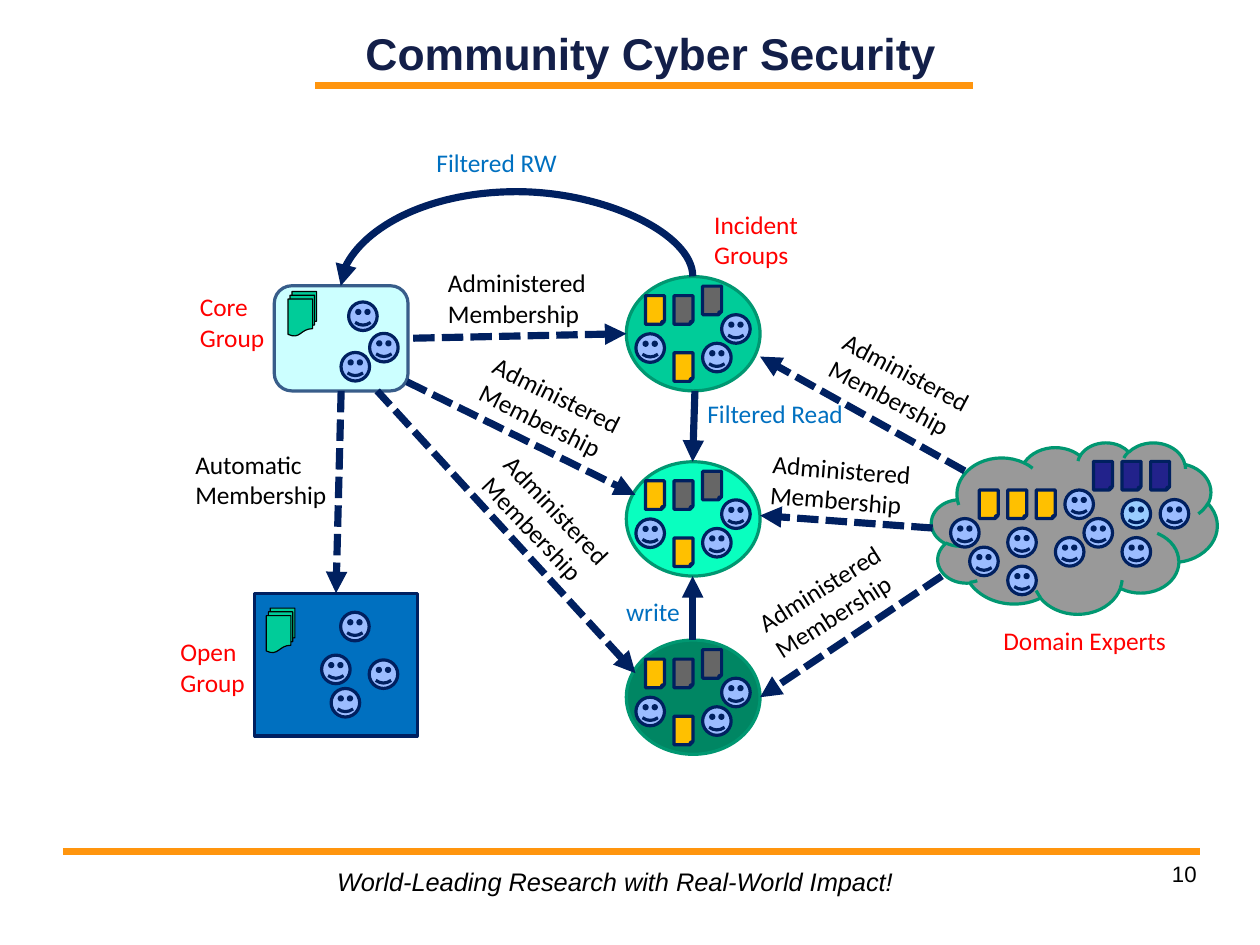
from lxml import etree
from pptx import Presentation
from pptx import util as u
from pptx.dml.color import RGBColor
from pptx.enum import dml, shapes, text
from pptx.oxml.ns import qn

COLORS = {
    "navy": "002060", "title": "131F49", "orange": "FF950E", "black": "000000",
    "red": "FF0000", "blue": "0070C0", "pale": "CCFFFF", "steel": "385D8A",
    "green": "00CC99", "mint": "09FFBF", "deep": "008663", "rim": "009771",
    "gray": "999999", "face": "9BBCFF", "sky": "99CCFF", "gold": "FFC000",
    "slate": "666666", "indigo": "22228B",
}
SHAPE = shapes.MSO_SHAPE
CELL = 1 / 12
FACE = 3 * CELL
NOTE = 2 * CELL


def color(name):
    """Return the named colour."""
    return RGBColor.from_string(COLORS[name])


def add_figure(page, kind, box, fill, outline="navy", weight=2):
    """Draw a filled preset shape in a box given in inches."""
    figure = page.shapes.add_shape(kind, *map(u.Inches, box))
    figure.shadow.inherit = False
    figure.fill.solid()
    figure.fill.fore_color.rgb = color(fill)
    figure.line.color.rgb = color(outline)
    figure.line.width = u.Pt(weight)
    return figure


def add_label(page, words, box, ink="black", turn=0, face="Calibri", size=16):
    """Write a single paragraph in a box, turned clockwise in degrees."""
    label = page.shapes.add_textbox(*map(u.Inches, box))
    label.rotation = turn
    label.text_frame.word_wrap = True
    para = label.text_frame.paragraphs[0]
    para.text = words
    para.font.name, para.font.size = face, u.Pt(size)
    para.font.color.rgb = color(ink)
    return label


def add_line(page, start, end, ink="navy", weight=4.5, dashed=False, tip=None,
             kind=shapes.MSO_CONNECTOR.STRAIGHT):
    """Draw a line; tip is headEnd or tailEnd for an arrowhead there."""
    line = page.shapes.add_connector(kind, *map(u.Inches, (*start, *end)))
    line.line.color.rgb = color(ink)
    line.line.width = u.Pt(weight)
    if dashed:
        line.line.dash_style = dml.MSO_LINE.SQUARE_DOT
    props = line.element.spPr
    if tip:
        etree.SubElement(props.find(qn("a:ln")), qn(f"a:{tip}"), type="triangle")
    etree.SubElement(props, qn("a:effectLst"))
    return line


def add_members(page, box, faces, notes=()):
    """Place faces and notes on a grid that starts at the box corner."""
    left, top = box[:2]
    for column, row, fill in notes:
        place = (left + column * CELL, top + row * CELL, NOTE, FACE)
        add_figure(page, SHAPE.FOLDED_CORNER, place, fill)
    for column, row, fill in faces:
        place = (left + column * CELL, top + row * CELL, FACE, FACE)
        smiley = add_figure(page, SHAPE.SMILEY_FACE, place, fill)
        smiley.adjustments[0] = 0.047


def add_file_group(page, box, kind, fill, outline, files, faces):
    """Draw a group that holds a stack of files and some members."""
    group = add_figure(page, kind, box, fill, outline)
    place = (box[0] + files[0], box[1] + files[1], 0.25, 0.39)
    add_figure(page, SHAPE.FLOWCHART_MULTIDOCUMENT, place, "green", "black", 0.75)
    add_members(page, box, [(*spot, "face") for spot in faces])
    return group


def add_incident(page, box, fill):
    """Draw an incident group with its members and notes."""
    add_figure(page, SHAPE.OVAL, box, fill, "rim")
    faces = [(1, 6, "face"), (10, 4, "face"), (8, 7, "face")]
    notes = [(2, 2, "gold"), (5, 2, "slate"), (8, 1, "slate"), (5, 8, "gold")]
    add_members(page, box, faces, notes)


def add_experts(page, box):
    """Draw the cloud of domain experts."""
    add_figure(page, SHAPE.CLOUD, box, "gray", "rim")
    spots = [(4, 11), (8, 13), (13, 10), (8, 9), (2, 8), (16, 8), (20, 10), (24, 6), (14, 5)]
    faces = [(*spot, "face") for spot in spots] + [(20, 6, "sky")]
    notes = [(start + 3 * step, row, fill)
             for start, row, fill in [(5, 5, "gold"), (17, 2, "indigo")]
             for step in range(3)]
    add_members(page, box, faces, notes)


def add_arc(page, box):
    """Draw the curved arrow from the incident group back to the core group."""
    left, top, width, height = box
    arc = add_line(page, (left + width, top + height), (left, top), tip="tailEnd",
                   kind=shapes.MSO_CONNECTOR.CURVE)
    props = arc.element.spPr
    props.find(qn("a:xfrm")).set("rot", "16200000")
    guides = props.find(qn("a:prstGeom")).get_or_add_avLst()
    etree.SubElement(guides, qn("a:gd"), name="adj1", fmla="val -888200")


def add_arrows(page, core, open_group):
    """Draw the arrows between the groups."""
    add_line(page, (5.48, 2.92), (3.57, 2.96), dashed=True, tip="headEnd").end_connect(core, 3)
    automatic = add_line(page, (2.98, 3.42), (2.94, 5.19), dashed=True, tip="tailEnd")
    automatic.begin_connect(core, 2)
    automatic.end_connect(open_group, 0)
    add_line(page, (5.56, 5.89), (3.3, 3.42), dashed=True, tip="headEnd")
    for start, end, dashed in [
        ((3.56, 3.34), (5.56, 4.33), True),
        ((8.44, 4.12), (6.65, 3.12), True),
        ((8.16, 4.62), (6.65, 4.51), True),
        ((8.24, 5.04), (6.65, 6.1), True),
        ((6.08, 3.42), (6.06, 4.04), False),
        ((6.06, 5.6), (6.06, 5.04), False),
    ]:
        add_line(page, start, end, dashed=dashed, tip="tailEnd")
    add_arc(page, (4.48, 0.92, CELL, 3.08))


def add_labels(page):
    """Name the groups and the arrows."""
    for words, box, ink in [
        ("Core Group", (1.65, 2.5, 0.83, 0.64), "red"),
        ("Incident Groups", (6.15, 1.78, 1.08, 0.64), "red"),
        ("Open Group", (1.48, 5.52, 0.92, 0.64), "red"),
        ("Domain Experts", (8.68, 5.42, 1.71, 0.37), "red"),
        ("Filtered RW", (3.72, 1.24, 1.42, 0.37), "blue"),
        ("Filtered Read", (6.09, 3.43, 1.45, 0.64), "blue"),
        ("write", (5.38, 5.17, 0.83, 0.37), "blue"),
        ("Automatic Membership", (1.61, 3.88, 1.58, 0.64), "black"),
    ]:
        add_label(page, words, box, ink)
    for left, top, width, turn in [
        (3.82, 2.29, 1.58, 0), (4.09, 3.34, 1.79, 26.5), (4, 4.4, 1.86, 46.5),
        (7.15, 3.11, 1.65, 27.9), (6.65, 3.93, 1.6, 4.6), (6.5, 4.81, 1.9, 327.8),
    ]:
        add_label(page, "Administered Membership", (left, top, width, 0.64), turn=turn)


def clear_margins(frame):
    """Remove the inner margins of a text frame."""
    frame.margin_left = frame.margin_right = frame.margin_top = frame.margin_bottom = 0


def add_title(page, box):
    """Format the title and underline it."""
    title = page.shapes.title
    title.left, title.top, title.width, title.height = map(u.Inches, box)
    frame = title.text_frame
    frame.text = "Community Cyber Security"
    frame.vertical_anchor = text.MSO_ANCHOR.MIDDLE
    clear_margins(frame)
    para = frame.paragraphs[0]
    para.alignment = text.PP_ALIGN.CENTER
    para.font.name, para.font.size, para.font.bold = "Arial", u.Pt(28), True
    para.font.color.rgb = color("title")
    add_line(page, (2.76, 0.75), (8.51, 0.75), "orange", 4.31)


def add_footer(page, box):
    """Draw the footer rule, motto and page number."""
    left, top, width, height = box
    add_line(page, (left, top), (left + width, top), "orange", 4.31)
    motto = add_label(page, "World-Leading Research with Real-World Impact!",
                      (2.85, top + 0.08, 5.08, 0.37), face="Arial")
    motto.text_frame.word_wrap = False
    motto.text_frame.paragraphs[0].font.italic = True
    number = add_label(page, "10", (7.9, top + 0.08, 2.57, height - 0.08),
                       face="Arial", size=14)
    clear_margins(number.text_frame)
    number.text_frame.paragraphs[0].alignment = text.PP_ALIGN.RIGHT


def main():
    """Build the slide and save it."""
    deck = Presentation()
    deck.slide_width, deck.slide_height = u.Cm(28), u.Cm(21)
    page = deck.slides.add_slide(deck.slide_layouts[5])
    add_title(page, (2.85, 0.09, 5.68, 0.75))
    add_footer(page, (0.55, 7.45, 9.95, 0.65))
    core = add_file_group(page, (2.4, 2.5, 1.17, 0.92), SHAPE.FLOWCHART_ALTERNATE_PROCESS,
                          "pale", "steel", (0.12, 0.05), [(7.8, 1.7), (10, 5), (7, 7)])
    open_group = add_file_group(page, (2.23, 5.19, 1.42, 1.25), SHAPE.RECTANGLE,
                                "blue", "navy", (0.1, 0.13),
                                [(7, 6.5), (8, 10), (12, 7), (9, 2)])
    for top, fill in [(2.42, "green"), (4.04, "mint"), (5.6, "deep")]:
        add_incident(page, (5.48, top, 1.17, 1), fill)
    add_experts(page, (8.15, 3.87, 2.5, 1.5))
    add_arrows(page, core, open_group)
    add_labels(page)
    deck.save("out.pptx")


if __name__ == "__main__":
    main()
